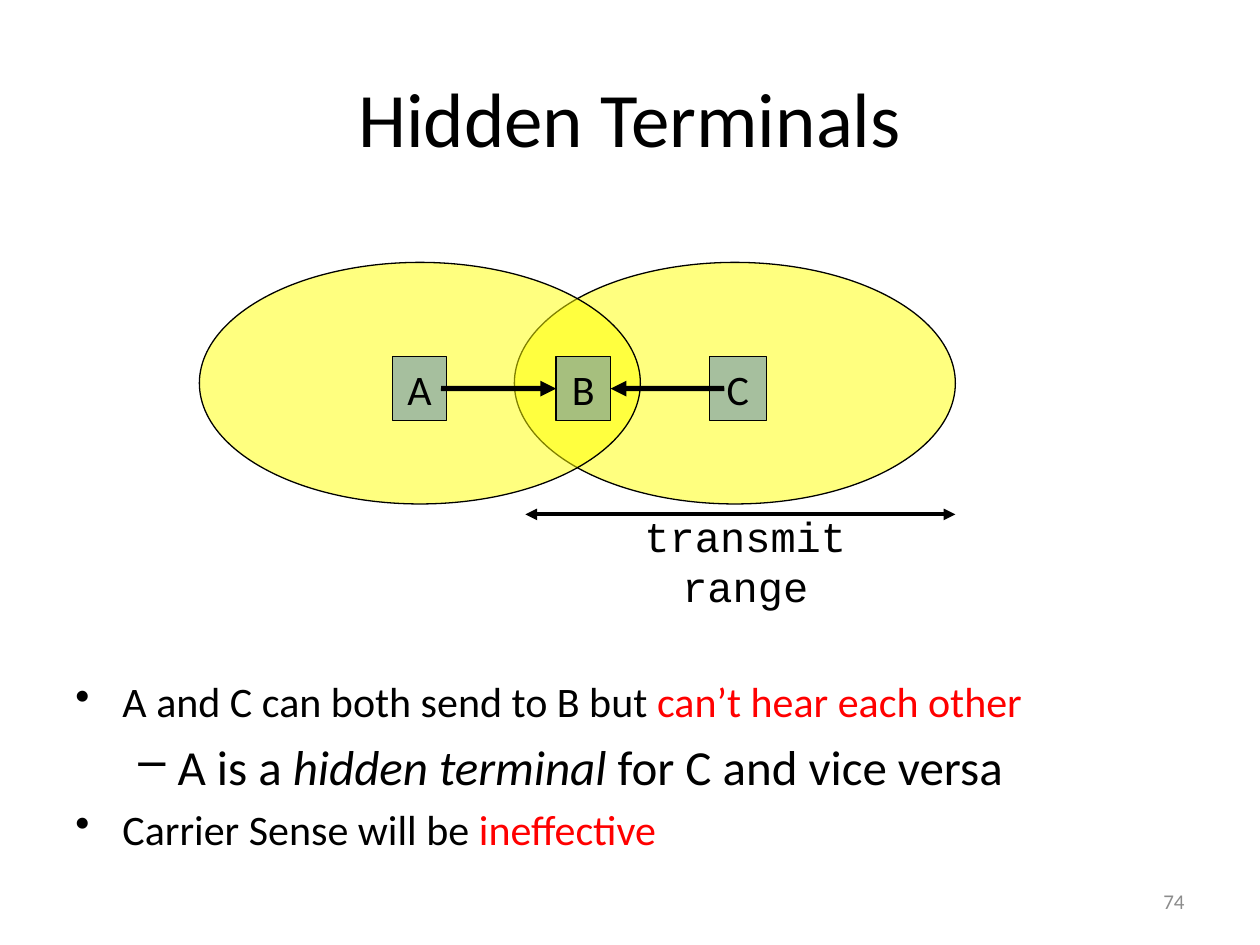
from dataclasses import dataclass

from lxml.etree import SubElement
from pptx import Presentation
from pptx.dml.color import RGBColor as Color
from pptx.enum.shapes import MSO_CONNECTOR as Connector, MSO_SHAPE as Shape
from pptx.enum.text import MSO_ANCHOR as Anchor, PP_ALIGN as Align
from pptx.oxml.ns import qn
from pptx.util import Cm, Pt


@dataclass(frozen=True)
class Theme:
    font: str = "Calibri"
    mono: str = "Courier New"
    ink: str = "000000"
    accent: str = "FF0000"
    muted: str = "8C8C8C"
    coverage: str = "FFFF00"
    station: str = "4F81BD"
    title: int = 44
    body: int = 24
    sub: int = 28
    small: int = 12


THEME = Theme()


def style_font(font, size, name=THEME.font, color=THEME.ink):
    font.size = Pt(size)
    font.name = name
    font.color.rgb = Color.from_string(color)


def write_line(frame, text, size, align=Align.CENTER, **style):
    para = frame.paragraphs[0]
    para.text = text
    para.alignment = align
    style_font(para.font, size, **style)


def add_text(page, area, anchor=Anchor.TOP):
    frame = page.shapes.add_textbox(*map(Cm, area)).text_frame
    frame.word_wrap = True
    frame.vertical_anchor = anchor
    return frame


def add_translucent(page, kind, area, color):
    shape = page.shapes.add_shape(kind, *map(Cm, area))
    shape.shadow.inherit = False
    shape.fill.solid()
    shape.fill.fore_color.rgb = Color.from_string(color)
    tint = shape.fill._xPr.find(".//" + qn("a:srgbClr"))
    SubElement(tint, qn("a:alpha"), val="50000")
    shape.line.color.rgb = Color.from_string(THEME.ink)
    shape.line.width = Pt(0.75)
    return shape


def add_station(page, name, left, width):
    box = add_translucent(page, Shape.RECTANGLE, (left, 7.19, width, 1.29), THEME.station)
    frame = box.text_frame
    frame.word_wrap = False
    frame.vertical_anchor = Anchor.MIDDLE
    write_line(frame, name, THEME.body)
    return box


def add_arrow(page, start, end, y, width, both=False):
    arrow = page.shapes.add_connector(Connector.STRAIGHT, Cm(start), Cm(y), Cm(end), Cm(y))
    arrow.line.color.rgb = Color.from_string(THEME.ink)
    arrow.line.width = Pt(width)
    line = arrow.line._get_or_add_ln()
    for tag in ("a:headEnd", "a:tailEnd") if both else ("a:tailEnd",):
        SubElement(line, qn(tag), type="triangle")
    SubElement(arrow._element.spPr, qn("a:effectLst"))
    return arrow


def add_bullet(para, level, spans):
    """Each span is (text, color, italic)."""
    mark, size, margin, hang = (("•", THEME.body, 0.95, 0.95),
                                ("–", THEME.sub, 2.06, 0.79))[level]
    para.level = level
    para.space_before = Pt(size * 0.2)
    style_font(para.font, size)
    props = para._p.get_or_add_pPr()
    props.set("marL", str(Cm(margin)))
    props.set("indent", str(-Cm(hang)))
    bullet = props.makeelement(qn("a:buChar"), {"char": mark})
    props.find(qn("a:defRPr")).addprevious(bullet)
    for text, color, italic in spans:
        span = para.add_run()
        span.text = text
        style_font(span.font, size, color=color)
        span.font.italic = italic


def add_diagram(page):
    # Coverage areas, the right one behind
    for left in (10.37, 4.02):
        add_translucent(page, Shape.OVAL, (left, 5.29, 8.89, 4.87), THEME.coverage)

    # Stations
    add_station(page, "A", 7.91, 1.1)
    receiver = add_station(page, "B", 11.21, 1.1)
    add_station(page, "C", 14.3, 1.15)

    # Transmissions into B
    for start, end, side in ((8.89, 11.21, 1), (14.6, 12.31, 3)):
        add_arrow(page, start, end, 7.83, 3).end_connect(receiver, side)

    # Transmit range
    add_arrow(page, 10.59, 19.26, 10.37, 2.25, both=True)
    frame = add_text(page, (12.06, 10.16, 5.93, 2.3))
    write_line(frame, "transmit range", THEME.body, name=THEME.mono)


def add_points(page):
    ink, accent = THEME.ink, THEME.accent
    points = (
        (0, (("A and C can both send to B but ", ink, False),
             ("can’t hear each other", accent, False))),
        (1, (("A is a ", ink, False), ("hidden terminal", ink, True),
             (" for C and vice versa", ink, False))),
        (0, (("Carrier Sense will be ", ink, False), ("ineffective", accent, False))),
    )
    frame = add_text(page, (1.27, 13.5, 22.86, 3.8))
    for index, (level, spans) in enumerate(points):
        para = frame.add_paragraph() if index else frame.paragraphs[0]
        add_bullet(para, level, spans)


def main():
    deck = Presentation()
    deck.slide_width, deck.slide_height = Cm(25.4), Cm(19.05)
    page = deck.slides.add_slide(deck.slide_layouts[6])

    # Title
    title = add_text(page, (1.27, 0.76, 22.86, 3.18), Anchor.MIDDLE)
    write_line(title, "Hidden Terminals", THEME.title)

    add_diagram(page)
    add_points(page)

    # Page number
    number = add_text(page, (18.2, 17.65, 5.93, 1.02), Anchor.MIDDLE)
    write_line(number, "74", THEME.small, Align.RIGHT, color=THEME.muted)

    deck.save("out.pptx")


if __name__ == "__main__":
    main()
